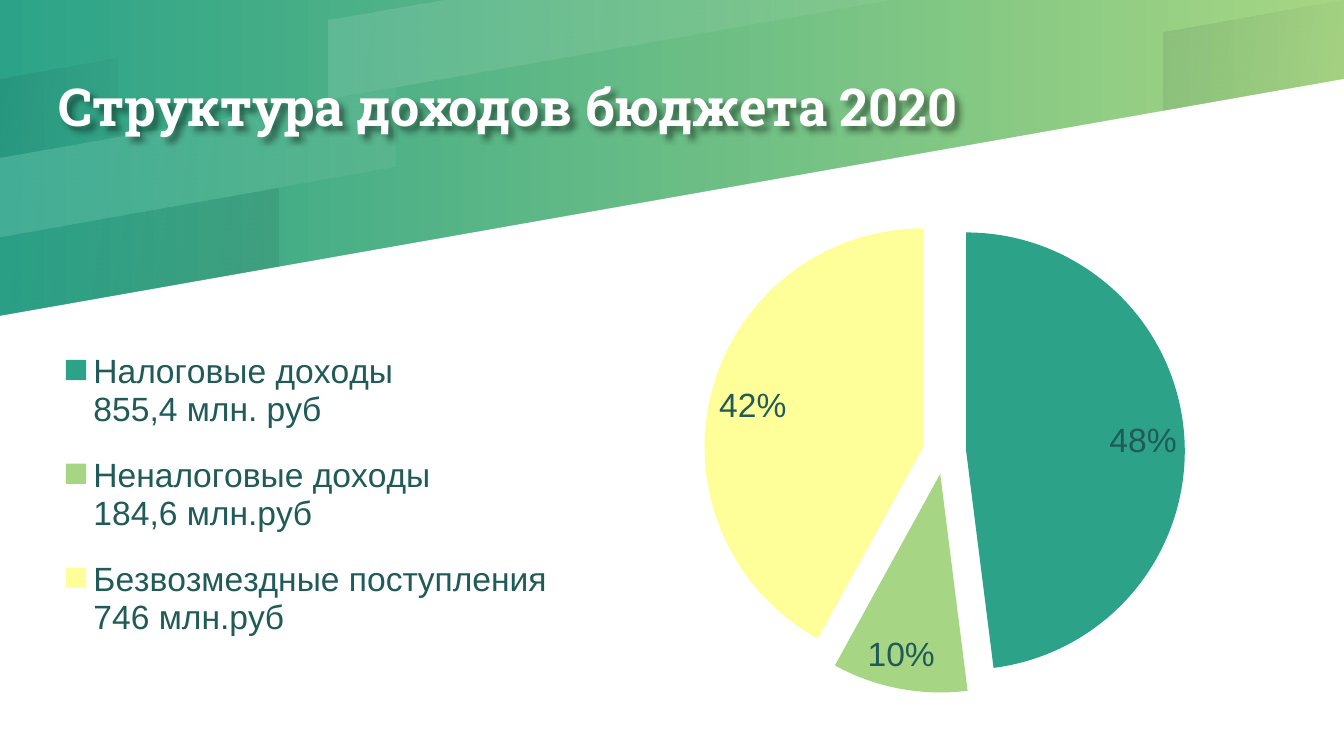
from lxml import etree
from pptx import Presentation
from pptx import util as u
from pptx.chart import data
from pptx.dml.color import RGBColor
from pptx.enum import chart as ch, text
from pptx.oxml import parse_xml
from pptx.oxml.ns import nsdecls, qn

PX = 914400 / 134.4
COLORS = {"teal": "2CA388", "green": "A6D683", "white": "FFFFFF",
          "shade": "00001A", "text": "205A59"}
PIE = ["2CA288", "A6D584", "FFFF99"]
TITLE = "Структура доходов бюджета 2020"
INCOME = [
    ("Налоговые доходы\n855,4 млн. руб", 48),
    ("Неналоговые доходы\n184,6 млн.руб", 10),
    ("Безвозмездные поступления\n746 млн.руб", 42),
]
PANEL = [(0, 756), (1344, 756), (1344, 79), (0, 316)]
STRIPS = [
    ([(446, 0), (328, 20), (328, 99), (894, 0)], "white", (12, 5)),
    ([(0, 79), (0, 158), (117, 137), (117, 58)], "shade", (8, 2)),
    ([(0, 237), (0, 316), (278, 267), (278, 188)], "shade", (2, 8)),
    ([(1344, 0), (1164, 32), (1164, 111), (1344, 79)], "shade", (8, 2)),
    ([(0, 158), (0, 237), (395, 167), (395, 88)], "white", (12, 5)),
]
TITLE_BOX = (59, 1, 1005, 178)
CHART_BOX = (27, 134, 1292, 597)
PLOT_BOX = (553, 78, 729, 481)
LEGEND_BOX = (21, 191, 517, 340)


def rgb(name):
    return RGBColor.from_string(COLORS.get(name, name))


def emu(box):
    return [u.Emu(round(v * PX)) for v in box]


def gradient(fill, colors, angle):
    fill.gradient()
    fill.gradient_angle = angle
    for stop, color, position in zip(fill.gradient_stops, colors, (0, 1)):
        stop.color.rgb = rgb(color)
        stop.position = position


def polygon(s, points):
    builder = s.shapes.build_freeform(*points[0], scale=PX)
    builder.add_line_segments(points[1:], close=True)
    sp = builder.convert_to_shape()
    sp.shadow.inherit = False
    sp.line.fill.background()
    return sp


def layout(box, inner=False):
    target = '<c:layoutTarget val="inner"/>' if inner else ""
    modes = "".join(f'<c:{k}Mode val="edge"/>' for k in "xy")
    sizes = "".join(f'<c:{k} val="{v / full:.4f}"/>'
                    for k, v, full in zip("xywh", box, CHART_BOX[2:] * 2))
    return parse_xml(f'<c:layout {nsdecls("c")}><c:manualLayout>{target}{modes}'
                     f'{sizes}</c:manualLayout></c:layout>')


def add_background(s):
    gradient(s.background.fill, ("teal", "green"), 0)
    panel = polygon(s, PANEL)
    panel.fill.solid()
    panel.fill.fore_color.rgb = rgb("white")
    for points, color, alphas in STRIPS:
        sp = polygon(s, points)
        gradient(sp.fill, (color, color), 350)
        for clr, alpha in zip(sp._element.xpath(".//a:gs/a:srgbClr"), alphas):
            etree.SubElement(clr, qn("a:alpha"), val=str(alpha * 1000))


def add_title(s):
    sp = s.shapes.add_textbox(*emu(TITLE_BOX))
    sp._element.spPr.append(parse_xml(
        f'<a:effectLst {nsdecls("a")}><a:outerShdw blurRad="38100" dist="38100" '
        'dir="2700000"><a:srgbClr val="000000"><a:alpha val="43000"/></a:srgbClr>'
        '</a:outerShdw></a:effectLst>'))
    tf = sp.text_frame
    tf.word_wrap = True
    tf.vertical_anchor = text.MSO_ANCHOR.MIDDLE
    tf.margin_left = tf.margin_right = tf.margin_top = tf.margin_bottom = 0
    p = tf.paragraphs[0]
    p.line_spacing = 1.5
    r = p.add_run()
    r.text = TITLE
    r.font.name, r.font.size, r.font.bold = "Roboto Slab", u.Pt(28), True
    r.font.color.rgb = rgb("white")


def add_income_chart(s):
    chart_data = data.CategoryChartData()
    chart_data.categories = [name for name, _ in INCOME]
    chart_data.add_series("Series 1", [share for _, share in INCOME])
    chart = s.shapes.add_chart(ch.XL_CHART_TYPE.PIE, *emu(CHART_BOX), chart_data).chart
    chart.has_title = False
    chart.font.name, chart.font.size = "Arial", u.Pt(18)
    chart.font.color.rgb = rgb("text")

    chart.has_legend = True
    chart.legend.position = ch.XL_LEGEND_POSITION.RIGHT
    chart.legend.include_in_layout = False
    legend = chart.legend._element
    plot_area = chart._chartSpace.xpath(".//c:plotArea")[0]
    for parent in (legend, plot_area):
        for old in parent.findall(qn("c:layout")):
            parent.remove(old)
    legend.find(qn("c:legendPos")).addnext(layout(LEGEND_BOX))
    plot_area.insert(0, layout(PLOT_BOX, inner=True))

    plot = chart.plots[0]
    plot.vary_by_categories = True
    series = plot.series[0]
    series._element.find(qn("c:tx")).addnext(
        parse_xml(f'<c:explosion {nsdecls("c")} val="10"/>'))
    for i, color in enumerate(PIE):
        fill = series.points[i].format.fill
        fill.solid()
        fill.fore_color.rgb = rgb(color)
    labels = series.data_labels
    labels.show_percentage = True
    labels.show_value = False
    labels.number_format, labels.number_format_is_linked = "0%", False
    labels.position = ch.XL_LABEL_POSITION.BEST_FIT
    labels.font.name, labels.font.size = "Arial", u.Pt(18)
    labels.font.color.rgb = rgb("text")


def main():
    prs = Presentation()
    prs.slide_width, prs.slide_height = emu((1344, 756))
    s = prs.slides.add_slide(prs.slide_layouts[6])
    add_background(s)
    add_title(s)
    add_income_chart(s)
    prs.save("out.pptx")


if __name__ == "__main__":
    main()
